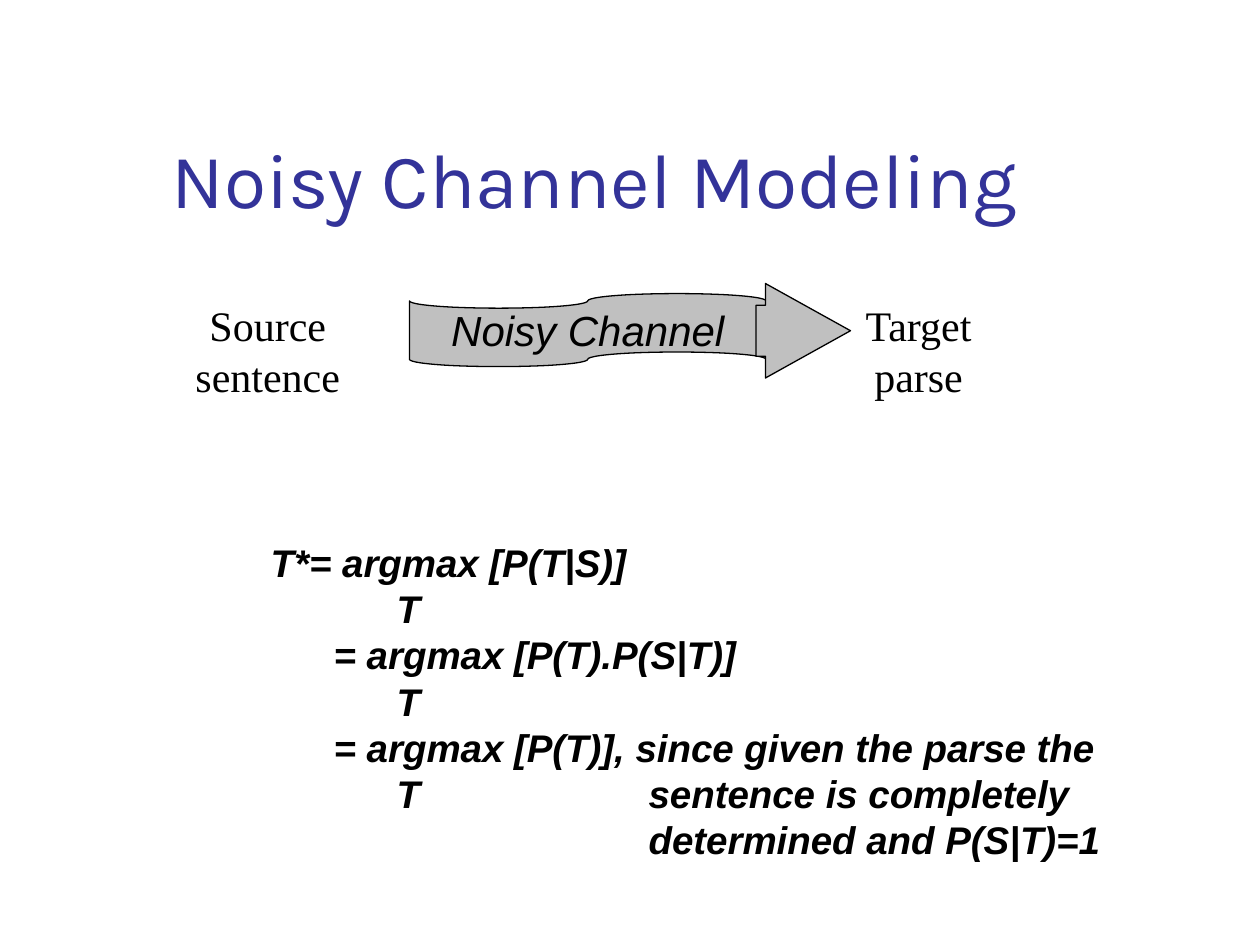
from dataclasses import dataclass
from lxml import etree
from pptx import Presentation
from pptx.dml.color import RGBColor
from pptx.enum.shapes import MSO_SHAPE
from pptx.enum.text import MSO_ANCHOR, MSO_AUTO_SIZE, PP_ALIGN
from pptx.oxml.ns import qn
from pptx.util import Inches, Pt

TAPE, ARROW = MSO_SHAPE.FLOWCHART_PUNCHED_TAPE, MSO_SHAPE.RIGHT_ARROW
LEFT, CENTER = PP_ALIGN.LEFT, PP_ALIGN.CENTER
BOTTOM, MIDDLE = MSO_ANCHOR.BOTTOM, MSO_ANCHOR.MIDDLE
FIXED = MSO_AUTO_SIZE.NONE


@dataclass(frozen=True)
class Theme:
    title: RGBColor = RGBColor(0x33, 0x33, 0x99)
    ink: RGBColor = RGBColor(0, 0, 0)
    fill: RGBColor = RGBColor(0xC0, 0xC0, 0xC0)
    head: int = 44
    body: int = 24
    math: int = 22
    leading: float = 1.2


theme = Theme()


def style(para, face, size, color, align=LEFT, bold=False, italic=False):
    font = para.font
    font.name, font.size = face, Pt(size)
    font.bold, font.italic = bold, italic
    font.color.rgb = color
    para.alignment = align


def place(*box):
    return [Inches(n) for n in box]


deck = Presentation()
deck.slide_width, deck.slide_height = place(10, 7.5)
slide = deck.slides.add_slide(deck.slide_layouts[5])
shapes = slide.shapes

title = shapes.title
title.left, title.top, title.width, title.height = place(1.26, 0.23, 8.52, 1.6)
frame = title.text_frame
frame.text = "Noisy Channel Modeling"
frame.vertical_anchor = BOTTOM
frame.auto_size = FIXED
style(frame.paragraphs[0], "Karla", theme.head, theme.title)

tape = shapes.add_shape(TAPE, *place(3.25, 2.33, 2.83, 0.58))
arrow = shapes.add_shape(ARROW, *place(6, 2.25, 0.75, 0.75))
arrow.adjustments[0], arrow.adjustments[1] = 0.54, 0.9
for shape in (tape, arrow):
    shape.shadow.inherit = False
    shape.fill.solid()
    shape.fill.fore_color.rgb = theme.fill
    shape.line.color.rgb = theme.ink
    shape.line.width = Pt(0.75)

frame = tape.text_frame
frame.text = "Noisy Channel"
frame.word_wrap = False
frame.vertical_anchor = MIDDLE
style(frame.paragraphs[0], "Arial", theme.body, theme.ink, CENTER, italic=True)

for text, left, width in (("Source sentence", 1, 2.25), ("Target parse", 6.58, 1.42)):
    frame = shapes.add_textbox(*place(left, 2.33, width, 0.9)).text_frame
    frame.text = text
    frame.word_wrap = True
    para = frame.paragraphs[0]
    style(para, "Times New Roman", theme.body, theme.ink, CENTER)
    para.line_spacing = Pt(theme.body * theme.leading)

lines = (
    "T*= argmax [P(T|S)]",
    "\t\tT",
    "\t= argmax [P(T).P(S|T)]",
    "\t\tT",
    "\t= argmax [P(T)], since given the parse the",
    "\t\tT\t\t\t\tsentence is completely",
    "\t\t\t\t\t\tdetermined and P(S|T)=1",
)
frame = shapes.add_textbox(*place(2.05, 4.23, 6.8, 2.66)).text_frame
frame.text = "\n".join(lines)
frame.word_wrap = False
for para in frame.paragraphs:
    style(para, "Arial", theme.math, theme.ink, bold=True, italic=True)
    para.line_spacing = Pt(theme.math * theme.leading)
    tabs = etree.Element(qn("a:tabLst"))
    for stop in range(1, 7):
        etree.SubElement(tabs, qn("a:tab"), pos=str(Inches(0.5 * stop)), algn="l")
    para.font._element.addprevious(tabs)

deck.save("out.pptx")
